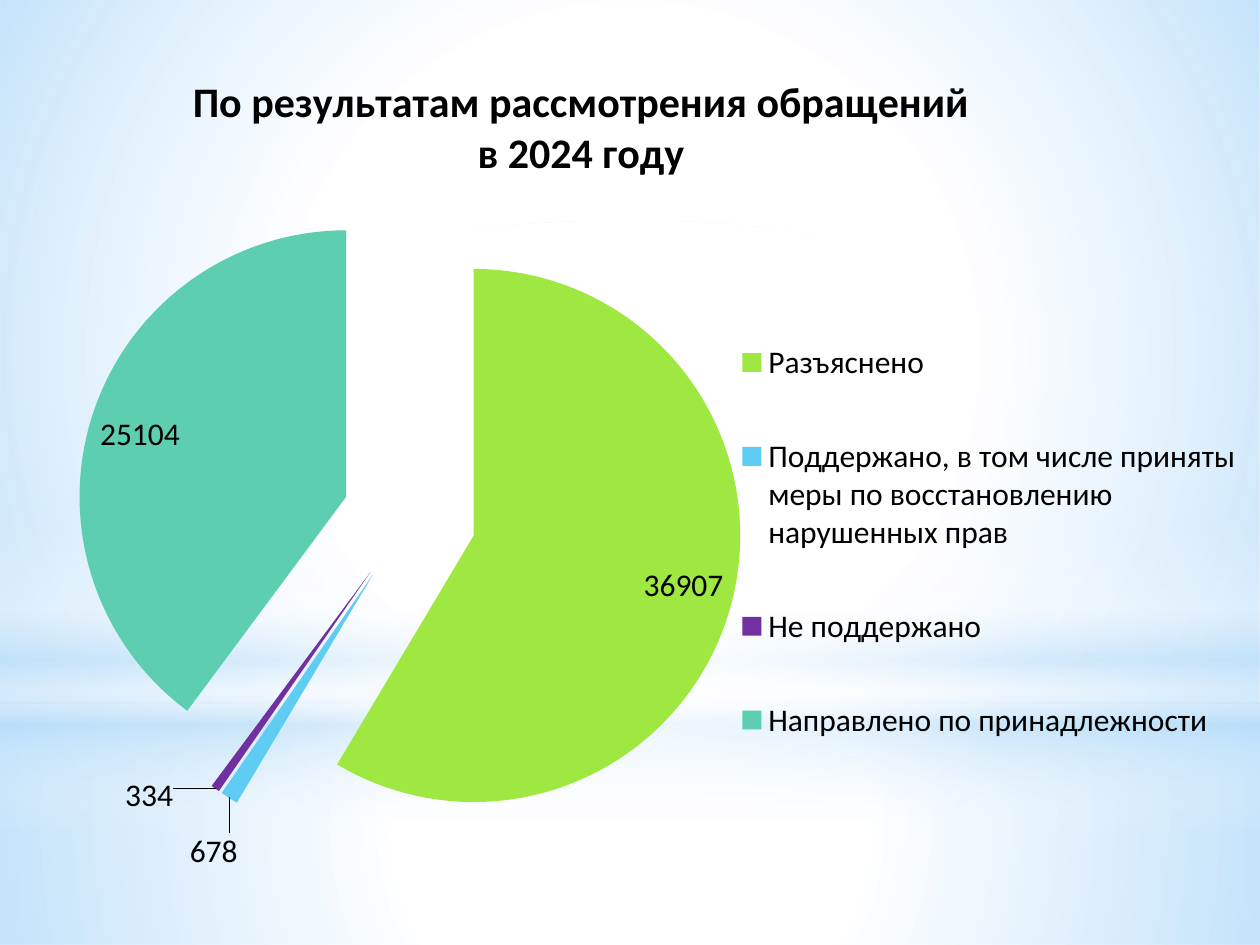
from lxml.etree import SubElement
from pptx import Presentation
from pptx.chart.data import CategoryChartData
from pptx.dml.color import RGBColor
from pptx.enum.chart import XL_CHART_TYPE, XL_LABEL_POSITION, XL_LEGEND_POSITION
from pptx.enum.shapes import MSO_SHAPE
from pptx.enum.text import PP_ALIGN
from pptx.oxml import parse_xml
from pptx.oxml.ns import nsdecls, qn
from pptx.util import Pt

COLORS = {
    "white": "FFFFFF", "sky": "B4DCFA", "text": "000000",
    "green": "9FE842", "blue": "5ECCF3", "purple": "7030A0", "teal": "5DCEAF",
}


def set_gradient(shape, stops, direction):
    """Fill a shape with (position, colour, opacity) stops, in percent."""
    stop_xml = "".join(
        f'<a:gs pos="{position * 1000}"><a:srgbClr val="{COLORS[color]}">'
        f'<a:alpha val="{opacity * 1000}"/></a:srgbClr></a:gs>'
        for position, color, opacity in stops)
    gradient = parse_xml(f'<a:gradFill {nsdecls("a")} rotWithShape="1">'
                         f'<a:gsLst>{stop_xml}</a:gsLst>{direction}</a:gradFill>')
    shape._element.spPr.find(qn("a:prstGeom")).addnext(gradient)


def set_layout(parent, index, **values):
    """Give a chart part a manual layout, as fractions of the chart."""
    for old in parent.findall(qn("c:layout")):
        parent.remove(old)
    layout = parse_xml(f'<c:layout {nsdecls("c")}><c:manualLayout/></c:layout>')
    for name, value in values.items():
        SubElement(layout[0], qn(f"c:{name}")).set("val", str(value))
    parent.insert(index, layout)


deck = Presentation()
deck.slide_width, deck.slide_height = Pt(720), Pt(540)
page = deck.slides.add_slide(deck.slide_layouts[6])

# Background glow
radial = ('<a:path path="circle"><a:fillToRect l="50000" t="50000" '
          'r="50000" b="50000"/></a:path>')
vertical = '<a:lin ang="5400000" scaled="0"/>'
glows = [
    (MSO_SHAPE.RECTANGLE, 401.76, 138.24, radial,
     [(0, "white", 91), (37, "white", 76), (100, "sky", 79)]),
    (MSO_SHAPE.RECTANGLE, 0, 401.76, radial,
     [(0, "white", 89), (48, "white", 62), (100, "sky", 79)]),
    (MSO_SHAPE.RECTANGLE, 296.64, 180, vertical,
     [(0, "white", 0), (29, "white", 30), (45, "sky", 40),
      (55, "white", 26), (65, "sky", 60), (100, "white", 0)]),
    (MSO_SHAPE.OVAL, 126, 401.76, radial,
     [(0, "white", 100), (56, "white", 0)]),
]
for kind, top, height, direction, stops in glows:
    glow = page.shapes.add_shape(kind, 0, Pt(top), Pt(720), Pt(height))
    glow.shadow.inherit = False
    glow.line.fill.background()
    set_gradient(glow, stops, direction)

# Pie chart: category, value, colour, label position, label shift
slices = [
    ("Разъяснено", 36907, "green", XL_LABEL_POSITION.INSIDE_END, None),
    ("Поддержано, в том числе приняты меры по восстановлению нарушенных прав",
     678, "blue", XL_LABEL_POSITION.OUTSIDE_END, (0.01, 0.03)),
    ("Не поддержано", 334, "purple", XL_LABEL_POSITION.OUTSIDE_END, (-0.03, -0.02)),
    ("Направлено по принадлежности", 25104, "teal",
     XL_LABEL_POSITION.INSIDE_END, None),
]
data = CategoryChartData()
data.categories = [item[0] for item in slices]
data.add_series("Series 1", [item[1] for item in slices])
chart = page.shapes.add_chart(
    XL_CHART_TYPE.PIE, 0, Pt(3.6), Pt(720), Pt(536.4), data).chart
chart.font.name = "Karla"
chart.font.size = Pt(18)
chart.font.color.rgb = RGBColor.from_string(COLORS["text"])
plot = chart.plots[0]
plot.vary_by_categories = True
set_layout(chart._chartSpace.chart.plotArea, 0, layoutTarget="inner",
           xMode="edge", yMode="edge", x=0.06, y=0.19, w=0.53, h=0.71)

# Slices and value labels
series = plot.series[0]
labels = series.data_labels
labels.show_value = True
labels.font.name = "Calibri"
labels.font.size = Pt(18)
for leader in labels._element.findall(qn("c:showLeaderLines")):
    labels._element.remove(leader)
SubElement(labels._element, qn("c:showLeaderLines")).set("val", "1")
for index, (_, _, color, position, shift) in enumerate(slices):
    point = series.points[index]
    point.format.fill.solid()
    point.format.fill.fore_color.rgb = RGBColor.from_string(COLORS[color])
    label = point.data_label
    label.position = position
    label.font.name = "Calibri"
    label.font.size = Pt(18)
    if shift:
        set_layout(labels._element.findall(qn("c:dLbl"))[index], 1,
                   x=shift[0], y=shift[1])
explosion = parse_xml(f'<c:explosion {nsdecls("c")} val="25"/>')
series._element.find(qn("c:dPt")).addprevious(explosion)

# Chart title
chart.has_title = True
title = chart.chart_title
title.include_in_layout = True
frame = title.text_frame
for index, line in enumerate(["По результатам рассмотрения обращений", "в 2024 году"]):
    para = frame.paragraphs[0] if index == 0 else frame.add_paragraph()
    para.alignment = PP_ALIGN.CENTER
    span = para.add_run()
    span.text = line
    span.font.name = "Calibri"
    span.font.size = Pt(24)
    span.font.bold = True
    span.font.color.rgb = RGBColor.from_string(COLORS["text"])
set_layout(title._element, 1, xMode="edge", yMode="edge", x=0.15, y=0.07)

# Legend
chart.has_legend = True
legend = chart.legend
legend.position = XL_LEGEND_POSITION.RIGHT
legend.include_in_layout = False
legend.font.name = "Calibri"
legend.font.size = Pt(18)
set_layout(legend._element, 1, xMode="edge", yMode="edge",
           x=0.58, y=0.3, w=0.41, h=0.54)

deck.save("out.pptx")
